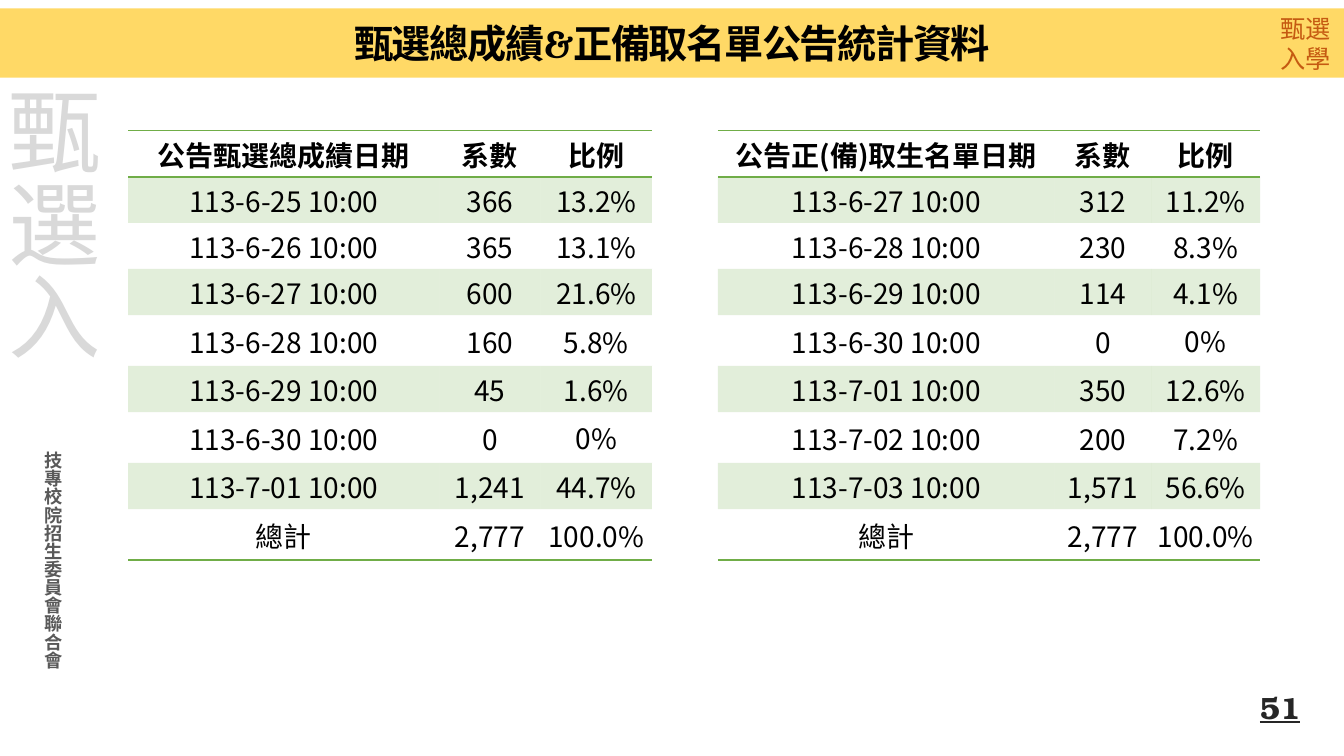
from lxml.etree import SubElement
from pptx import Presentation
from pptx.dml.color import RGBColor
from pptx.enum.shapes import MSO_SHAPE
from pptx.enum.text import MSO_ANCHOR as Anchor, PP_ALIGN as Align
from pptx.oxml.ns import qn
from pptx.util import Pt

COLORS = {
    "banner": "FFD966", "title": "000000", "badge": "C55A11", "watermark": "D9D9D9",
    "committee": "595959", "number": "262626", "green": "70AD47", "white": "FFFFFF",
}
SANS_JP, SANS_SC = "Noto Sans CJK JP", "Noto Sans CJK SC"
NO_STYLE = "{2D5ABB26-0587-4C30-8999-92F81FD0307C}"
COLUMN_WIDTHS = [222.5, 72, 80, 46.8, 240.5, 69, 77.8]
SHORT_ROW, TALL_ROW = 32.9, 36.4
TALL_ROWS = (4, 6, 8)
GAP_COLUMN = 3
ROWS = [
    ["公告甄選總成績日期", "系數", "比例", "", "公告正(備)取生名單日期", "系數", "比例"],
    ["113-6-25 10:00", "366", "13.2%", "", "113-6-27 10:00", "312", "11.2%"],
    ["113-6-26 10:00", "365", "13.1%", "", "113-6-28 10:00", "230", "8.3%"],
    ["113-6-27 10:00", "600", "21.6%", "", "113-6-29 10:00", "114", "4.1%"],
    ["113-6-28 10:00", "160", "5.8%", "", "113-6-30 10:00", "0", "0%"],
    ["113-6-29 10:00", "45", "1.6%", "", "113-7-01 10:00", "350", "12.6%"],
    ["113-6-30 10:00", "0", "0%", "", "113-7-02 10:00", "200", "7.2%"],
    ["113-7-01 10:00", "1,241", "44.7%", "", "113-7-03 10:00", "1,571", "56.6%"],
    ["總計", "2,777", "100.0%", "", "總計", "2,777", "100.0%"],
]


def rgb(name):
    """Return the named colour."""
    return RGBColor.from_string(COLORS[name])


def write_text(frame, text, *, size, font, color, east_asian=None, bold=False,
               underline=False, align=Align.CENTER, line_spacing=None, tracking=None):
    """Fill a text frame with one formatted paragraph per line of text."""
    for index, line in enumerate(text.split("\n")):
        paragraph = frame.add_paragraph() if index else frame.paragraphs[0]
        paragraph.alignment = align
        if line_spacing:
            paragraph.line_spacing = line_spacing
        run = paragraph.add_run()
        run.text = line
        run.font.size = Pt(size)
        run.font.bold = bold
        run.font.underline = underline
        run.font.name = font
        run.font.color.rgb = rgb(color)
        properties = run.font._element
        properties.find(qn("a:latin")).addnext(
            properties.makeelement(qn("a:ea"), {"typeface": east_asian or font}))
        if tracking:
            properties.set("spc", str(tracking * 100))


def add_text_box(slide, text, box, *, vertical=False, wrap=True, anchor=Anchor.TOP, **style):
    """Add a text box, set vertically if asked."""
    frame = slide.shapes.add_textbox(*map(Pt, box)).text_frame
    frame.word_wrap = wrap
    frame.vertical_anchor = anchor
    if vertical:
        frame._txBody.bodyPr.set("vert", "eaVert")
    write_text(frame, text, **style)


def add_banner(slide, box):
    """Add the plain coloured band behind the title."""
    banner = slide.shapes.add_shape(MSO_SHAPE.RECTANGLE, *map(Pt, box))
    banner.shadow.inherit = False
    banner.fill.solid()
    banner.fill.fore_color.rgb = rgb("banner")
    banner.line.fill.background()


def add_border(cell, side):
    """Draw a green rule on one side of a cell."""
    line = SubElement(cell._tc.get_or_add_tcPr(), qn(f"a:{side}"), w=str(Pt(1)))
    fill = SubElement(line, qn("a:solidFill"))
    SubElement(fill, qn("a:srgbClr"), val=COLORS["green"])


def fill_cell(cell, color, opacity=100):
    """Fill a cell with a colour of the given opacity in percent."""
    cell.fill.solid()
    cell.fill.fore_color.rgb = rgb(color)
    if opacity < 100:
        swatch = cell._tc.tcPr.find(f"{qn('a:solidFill')}/{qn('a:srgbClr')}")
        SubElement(swatch, qn("a:alpha"), val=str(opacity * 1000))


def format_cell(cell, text, row):
    """Write and style one data cell according to its row."""
    if text == "0%":
        cell.vertical_anchor = Anchor.BOTTOM
    else:
        cell.vertical_anchor = Anchor.MIDDLE
        cell.margin_left = cell.margin_right = cell.margin_top = Pt(0.7)
        cell.margin_bottom = Pt(0)
    write_text(cell.text_frame, text, size=20, font=SANS_SC, color="title", bold=row == 0)
    if row == 0:
        add_border(cell, "lnT")
    if row in (0, len(ROWS) - 1):
        add_border(cell, "lnB")
    if row % 2:
        fill_cell(cell, "green", 20)
    else:
        cell.fill.background()


def add_statistics_table(slide, left, top):
    """Add the two side-by-side statistics as one table with a gap column."""
    heights = [TALL_ROW if row in TALL_ROWS else SHORT_ROW for row in range(len(ROWS))]
    frame = slide.shapes.add_table(len(ROWS), len(COLUMN_WIDTHS), Pt(left), Pt(top),
                                   Pt(sum(COLUMN_WIDTHS)), Pt(sum(heights)))
    frame._element.find(f".//{qn('a:tableStyleId')}").text = NO_STYLE
    table = frame.table
    table.first_row = table.horz_banding = False
    for column, width in zip(table.columns, COLUMN_WIDTHS):
        column.width = Pt(width)
    for row, texts in enumerate(ROWS):
        table.rows[row].height = Pt(heights[row])
        for column, text in enumerate(texts):
            cell = table.cell(row, column)
            if column == GAP_COLUMN:
                fill_cell(cell, "white")
            else:
                format_cell(cell, text, row)


def main():
    """Build the slide and save it."""
    presentation = Presentation()
    presentation.slide_width, presentation.slide_height = Pt(960), Pt(540)
    slide = presentation.slides.add_slide(presentation.slide_layouts[6])
    add_banner(slide, (0, 6, 960, 49.5))
    add_text_box(slide, "技專校院招生委員會聯合會", (19.5, 315.5, 30, 184), vertical=True,
                 size=13, font=SANS_JP, color="committee", bold=True)
    add_text_box(slide, "甄選入", (-14.5, 54, 94.5, 271.5), vertical=True, align=Align.LEFT,
                 size=66, font=SANS_SC, color="watermark")
    add_text_box(slide, "甄選\n入學", (907, 6, 51, 51), wrap=False,
                 size=18, font=SANS_JP, color="badge")
    add_text_box(slide, "甄選總成績&正備取名單公告統計資料", (0, 8, 960, 49.5),
                 anchor=Anchor.MIDDLE, size=28, font="Cambria", east_asian=SANS_SC,
                 color="title", bold=True, line_spacing=0.9, tracking=-1)
    add_statistics_table(slide, 91.5, 93.5)
    add_text_box(slide, "51", (720, 490.5, 216, 29), anchor=Anchor.MIDDLE, align=Align.RIGHT,
                 size=22, font="TeX Gyre Bonum", color="number", bold=True, underline=True)
    presentation.save("out.pptx")


if __name__ == "__main__":
    main()
